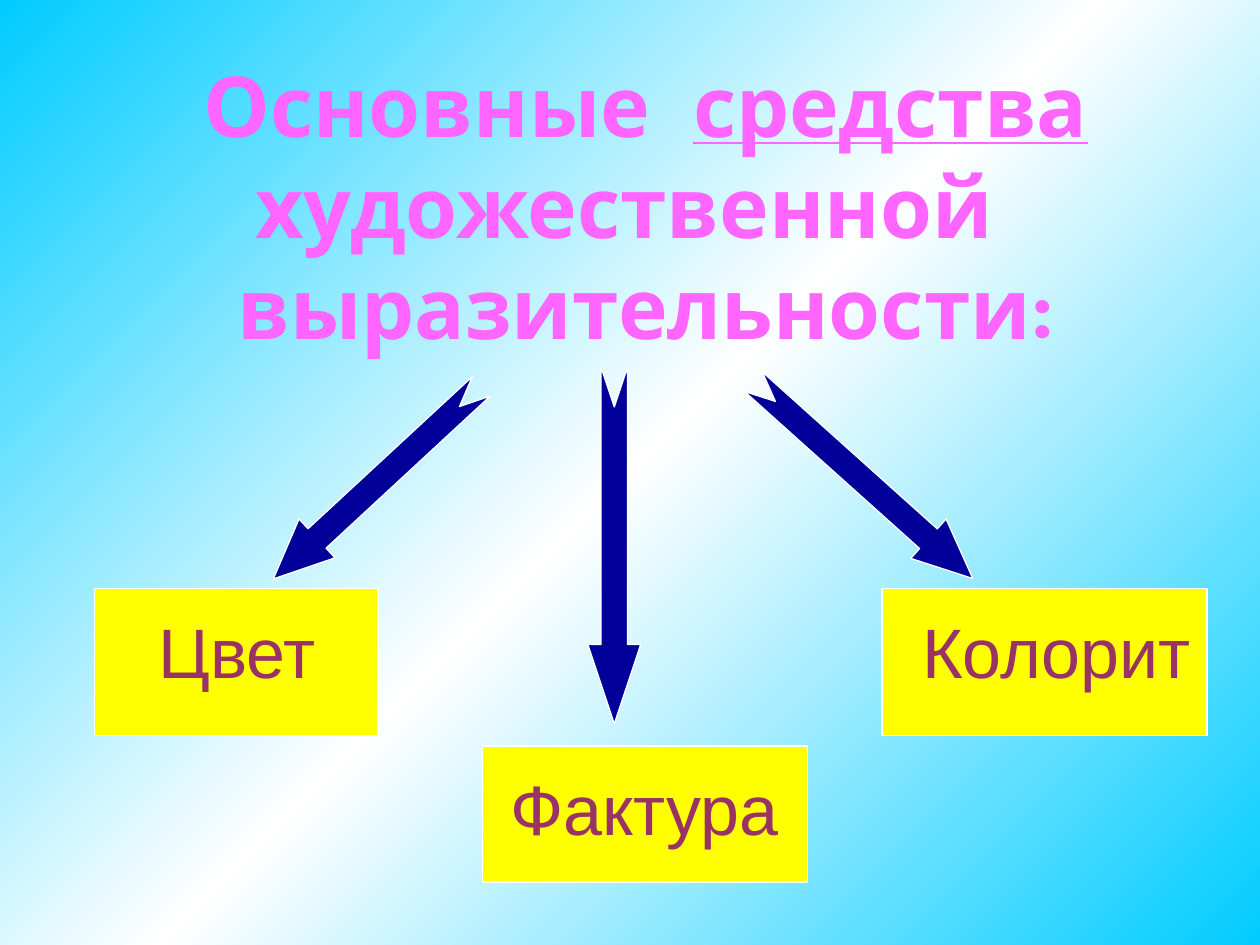
from copy import deepcopy

from pptx import Presentation
from pptx.dml.color import RGBColor
from pptx.enum.shapes import MSO_SHAPE as Shape
from pptx.enum.text import MSO_ANCHOR as Anchor, MSO_AUTO_SIZE as AutoSize, PP_ALIGN as Align
from pptx.util import Inches, Pt

COLORS = {"sky": "00CCFF", "white": "FFFFFF", "title": "FF66FF",
          "box": "FFFF00", "label": "993366", "arrow": "010199"}


def add_span(para, text, font, size, color):
    span = para.add_run()
    span.text = text
    span.font.name = font
    span.font.size = Pt(size)
    span.font.color.rgb = RGBColor.from_string(COLORS[color])
    return span


def add_filled(shapes, kind, place, color):
    """Add a preset shape with a solid fill and a thin white outline."""
    shape = shapes.add_shape(kind, *map(Inches, place))
    shape.shadow.inherit = False
    shape.fill.solid()
    shape.fill.fore_color.rgb = RGBColor.from_string(COLORS[color])
    shape.line.color.rgb = RGBColor.from_string(COLORS["white"])
    shape.line.width = Pt(0.75)
    return shape


deck = Presentation()
deck.slide_width, deck.slide_height = Inches(10), Inches(7.5)
page = deck.slides.add_slide(deck.slide_layouts[5])

# Diagonal background: sky, white, sky
backdrop = page.background.fill
backdrop.gradient()
backdrop.gradient_angle = 315
first_stop = backdrop.gradient_stops[0]
first_stop.color.rgb = RGBColor.from_string(COLORS["sky"])
stop_list = backdrop._fill._gradFill.gsLst
stop_list.insert(1, deepcopy(stop_list[0]))
for stop, position, color in zip(backdrop.gradient_stops, (0, 0.5, 1), ("sky", "white", "sky")):
    stop.position = position
    stop.color.rgb = RGBColor.from_string(COLORS[color])

# Title
title = page.shapes.title
title.left, title.top, title.width, title.height = map(Inches, (0.75, 0.25, 8.75, 2.75))
frame = title.text_frame
frame.word_wrap = True
frame.auto_size = AutoSize.NONE
frame.vertical_anchor = Anchor.MIDDLE
para = frame.paragraphs[0]
para.alignment = Align.CENTER
for text, underlined, ends_line in [("Основные  ", False, False), ("средства", True, True),
                                    ("художественной  ", False, True),
                                    ("выразительности:", False, False)]:
    span = add_span(para, text, "Karla", 48, "title")
    span.font.bold = True
    span.font.underline = underlined
    if ends_line:
        para.add_line_break()

# Labelled boxes: text, box place, label left and width
for text, place, label_left, label_width in [("Цвет", (0.75, 4.67, 2.25, 1.17), 1.16, 1.53),
                                             ("Колорит", (7, 4.67, 2.58, 1.17), 7.22, 2.37),
                                             ("Фактура", (3.83, 5.92, 2.58, 1.08), 3.95, 2.47)]:
    group = page.shapes.add_group_shape()
    add_filled(group.shapes, Shape.RECTANGLE, place, "box")
    label = group.shapes.add_textbox(Inches(label_left), Inches(place[1] + 0.11),
                                     Inches(label_width), Inches(0.77))
    label.text_frame.word_wrap = True
    label.text_frame.auto_size = AutoSize.SHAPE_TO_FIT_TEXT
    add_span(label.text_frame.paragraphs[0], text, "Arial", 40, "label")

# Arrows from the title to the boxes: left, top, length, rotation, head length
for left, top, length, rotation, head in [(1.87, 3.62, 2.25, 137.2, 1.125),
                                          (3.46, 4.12, 2.83, 90, 1.5),
                                          (5.68, 3.6, 2.34, 41.9, 1.125)]:
    arrow = add_filled(page.shapes, Shape.NOTCHED_RIGHT_ARROW, (left, top, length, 0.42), "arrow")
    arrow.rotation = rotation
    arrow.adjustments[0] = 0.5
    arrow.adjustments[1] = head

deck.save("out.pptx")
